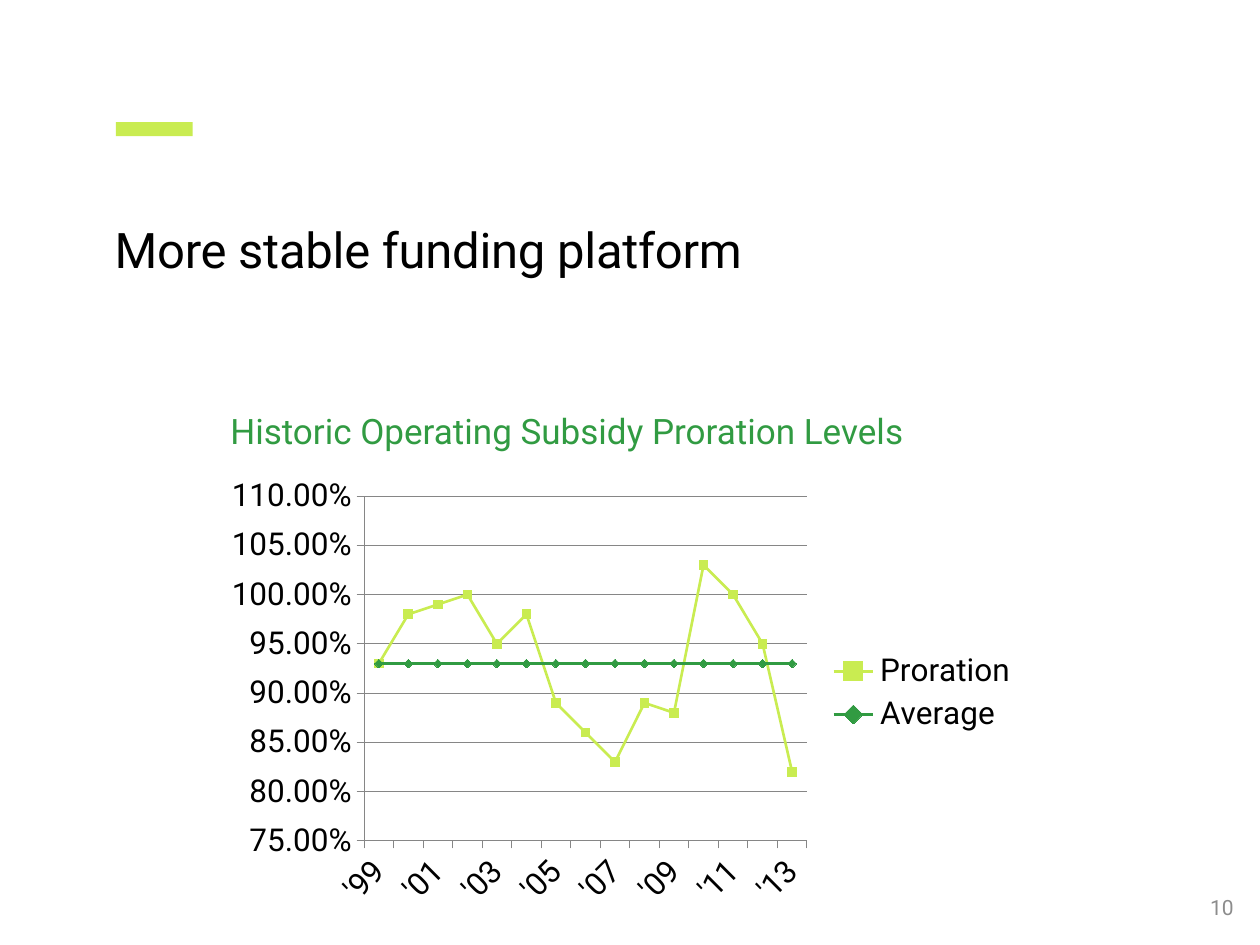
from pptx import Presentation
from pptx.chart.data import CategoryChartData
from pptx.dml.color import RGBColor
from pptx.enum.chart import XL_CHART_TYPE as Kind, XL_LEGEND_POSITION as Side
from pptx.enum.chart import XL_MARKER_STYLE as Mark, XL_TICK_MARK as Tick
from pptx.enum.shapes import MSO_SHAPE as Form
from pptx.enum.text import MSO_ANCHOR as Anchor, PP_ALIGN as Align
from pptx.oxml.ns import qn
from pptx.util import Inches, Pt

FONT = "Roboto"
LIME, GREEN, BLACK, GRAY, RULE = "C9EC51", "319B42", "000000", "8C8C8C", "868686"

TITLE = "More stable funding platform"
HEAD = "Historic Operating Subsidy Proration Levels"
PAGE = "10"
YEARS = [f"'{year % 100:02d}" for year in range(1999, 2014)]
RATES = [0.93, 0.98, 0.99, 1, 0.95, 0.98, 0.89, 0.86,
         0.83, 0.89, 0.88, 1.03, 1, 0.95, 0.82]
SERIES = [
    ("Proration", RATES, LIME, Mark.SQUARE),
    ("Average", [0.93] * len(YEARS), GREEN, Mark.DIAMOND),
]


def color(code):
    return RGBColor.from_string(code)


def box(*sides):
    return [Inches(side) for side in sides]


def style(font, size, code):
    font.name, font.size = FONT, Pt(size)
    font.color.rgb = color(code)


def write(frame, text, size, code, inset=(0.1, 0.05), anchor=Anchor.MIDDLE,
          align=Align.LEFT):
    frame.word_wrap = True
    frame.vertical_anchor = anchor
    frame.margin_left = frame.margin_right = Inches(inset[0])
    frame.margin_top = frame.margin_bottom = Inches(inset[1])
    para = frame.paragraphs[0]
    para.alignment = align
    run = para.add_run()
    run.text = text
    style(run.font, size, code)
    return run


def rule(line, code, width):
    line.color.rgb = color(code)
    line.width = Pt(width)


def add_plot(slide):
    data = CategoryChartData(number_format="0.00%")
    data.categories = YEARS
    for name, values, *_ in SERIES:
        data.add_series(name, values)
    chart = slide.shapes.add_chart(
        Kind.LINE_MARKERS, *box(1.71, 3.72, 6.47, 3.56), data).chart
    chart.has_title = False
    style(chart.font, 18, BLACK)
    chart.has_legend = True
    chart.legend.position = Side.RIGHT
    chart.legend.include_in_layout = False
    style(chart.legend.font, 18, BLACK)

    cat, val = chart.category_axis, chart.value_axis
    for axis in (cat, val):
        axis.major_tick_mark, axis.minor_tick_mark = Tick.OUTSIDE, Tick.NONE
        rule(axis.format.line, RULE, 0.5)
        style(axis.tick_labels.font, 18, BLACK)
    turn = cat._element.find(qn("c:txPr")).find(qn("a:bodyPr"))
    turn.set("rot", str(-45 * 60000))
    val.minimum_scale, val.maximum_scale, val.major_unit = 0.75, 1.1, 0.05
    val.tick_labels.number_format = "0.00%"
    val.tick_labels.number_format_is_linked = False
    val.has_major_gridlines = True
    rule(val.major_gridlines.format.line, RULE, 0.5)

    for line, (_, _, code, mark) in zip(chart.plots[0].series, SERIES):
        line.smooth = False
        rule(line.format.line, code, 1.5)
        line.marker.style, line.marker.size = mark, 5
        line.marker.format.fill.solid()
        line.marker.format.fill.fore_color.rgb = color(code)
        rule(line.marker.format.line, code, 0.75)


def main():
    deck = Presentation()
    deck.slide_width, deck.slide_height = box(10, 7.5)
    slide = deck.slides.add_slide(deck.slide_layouts[5])

    bar = slide.shapes.add_shape(Form.RECTANGLE, *box(0.92, 0.97, 0.61, 0.11))
    bar.shadow.inherit = False
    bar.fill.solid()
    bar.fill.fore_color.rgb = color(LIME)
    bar.line.fill.background()

    title = slide.shapes.title
    title.left, title.top, title.width, title.height = box(0.91, 1.74, 5.74, 1.05)
    run = write(title.text_frame, TITLE, 28, BLACK, (0, 0), Anchor.TOP)
    run.font._element.set("spc", "-14")

    page = slide.shapes.add_textbox(*box(7.64, 7, 2.25, 0.4))
    write(page.text_frame, PAGE, 12, GRAY, align=Align.RIGHT)
    add_plot(slide)
    head = slide.shapes.add_textbox(*box(1.73, 2.98, 7.03, 0.87))
    write(head.text_frame, HEAD, 20, GREEN)
    deck.save("out.pptx")


if __name__ == "__main__":
    main()
